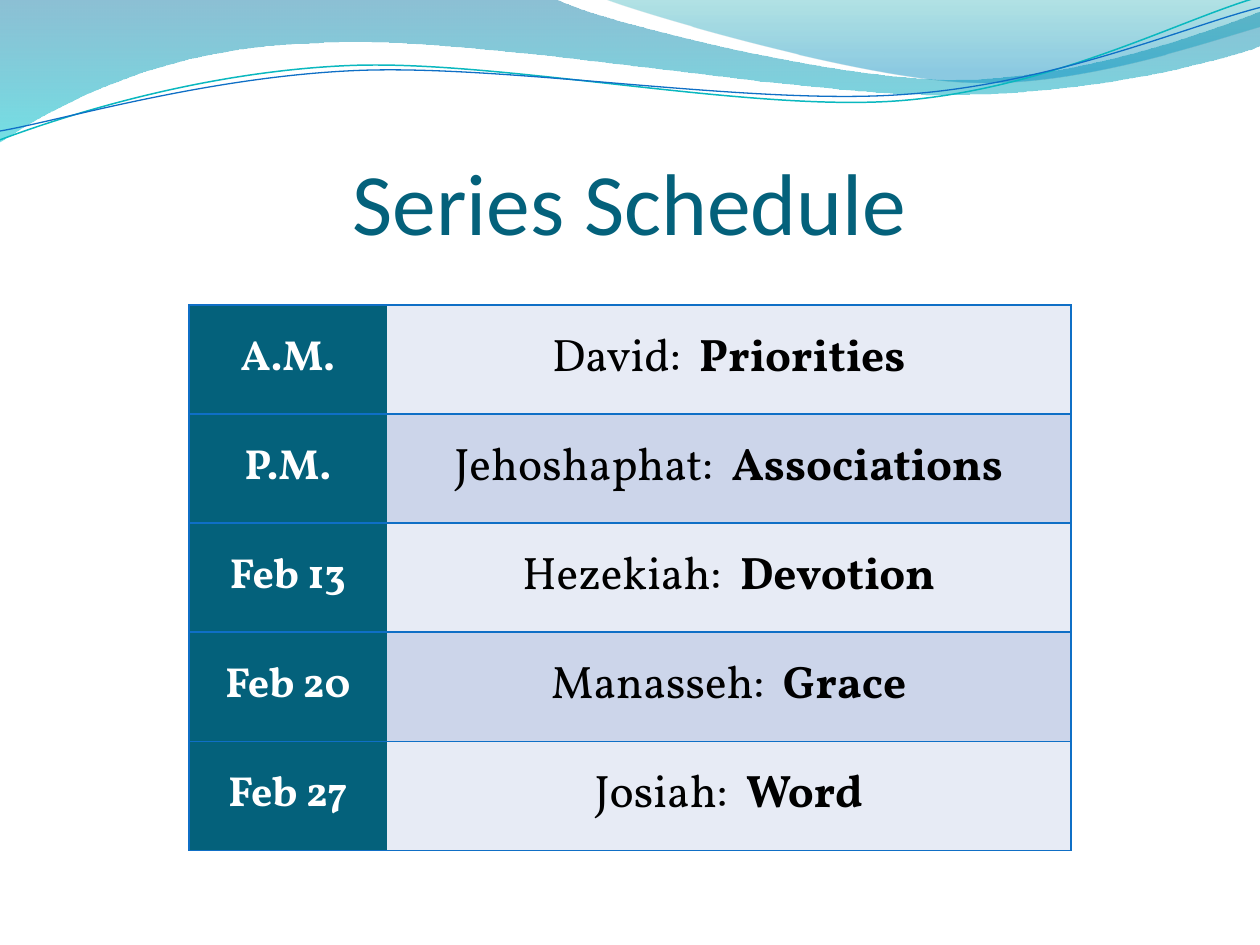
from dataclasses import dataclass
from math import cos, radians, sin

from lxml import etree
from pptx import Presentation
from pptx.dml.color import RGBColor
from pptx.enum.text import MSO_ANCHOR, PP_ALIGN
from pptx.oxml.ns import qn
from pptx.util import Inches, Pt

CENTER = PP_ALIGN.CENTER
MIDDLE, BOTTOM = MSO_ANCHOR.MIDDLE, MSO_ANCHOR.BOTTOM
COLUMNS, ROWS = 10, 7.5
UNIT = Inches(1)  # one grid column or row


@dataclass(frozen=True)
class Theme:
    heading_font: str = "Calibri"
    body_font: str = "Vollkorn"
    title_size: float = 50
    date_size: float = 24
    topic_size: float = 26
    teal: str = "04617B"
    blue: str = "0F6FC6"
    aqua: str = "0AB8BF"
    white: str = "FFFFFF"
    black: str = "000000"
    bands: tuple = ("E7EBF5", "CCD5EA")
    # gradient stops: position, colour, opacity in percent
    wide_wave: tuple = ((0, "0074A1", 45), (1, "00C6CF", 55))
    right_wave: tuple = ((0, "00A1A9", 30), (0.8, "008BBF", 45))


def grid(value):
    return round(value * UNIT)


def rgb(value):
    return RGBColor.from_string(value)


def turn(path, center, degrees):
    """Rotate every point of a path clockwise about the center."""
    (cx, cy), angle = center, radians(degrees)
    turned = []
    for step in path:
        flat = []
        for x, y in zip(step[::2], step[1::2]):
            dx, dy = x - cx, y - cy
            flat += [cx + dx * cos(angle) - dy * sin(angle),
                     cy + dx * sin(angle) + dy * cos(angle)]
        turned.append(tuple(flat))
    return turned


class SlideBuilder:
    def __init__(self, slide, theme):
        self.slide = slide
        self.theme = theme

    def outline(self, path, close):
        """Draw a path of points (2 numbers) and cubic curves (6 numbers)."""
        start, *others = [(grid(x), grid(y)) for step in path
                          for x, y in zip(step[::2], step[1::2])]
        builder = self.slide.shapes.build_freeform(*start)
        builder.add_line_segments(others, close=close)
        shape = builder.convert_to_shape()
        shape.shadow.inherit = False
        segments = shape.element.iter(qn("a:lnTo"))
        segments = iter(list(segments))
        for step in path[1:]:
            first, *rest = [next(segments) for _ in range(len(step) // 2)]
            if not rest:
                continue
            curve = etree.Element(qn("a:cubicBezTo"))
            first.addprevious(curve)
            for segment in (first, *rest):
                curve.append(segment[0])
                segment.getparent().remove(segment)
        return shape

    def wave(self, path, stops):
        shape = self.outline(path, close=True)
        shape.line.fill.background()
        shape.fill.gradient()
        shape.fill.gradient_angle = 270
        for stop, (position, color, _) in zip(shape.fill.gradient_stops, stops):
            stop.position = position
            stop.color.rgb = rgb(color)
        for node, (_, _, opacity) in zip(shape.element.iter(qn("a:srgbClr")), stops):
            etree.SubElement(node, qn("a:alpha"), val=str(opacity * 1000))

    def ribbon(self, path, center, color, width, tilt=2.7):
        shape = self.outline(turn(path, center, tilt), close=False)
        shape.rotation = 360 - tilt
        shape.fill.background()
        shape.line.color.rgb = rgb(color)
        shape.line.width = Pt(width)

    def style(self, paragraph, font_name, size, color):
        paragraph.alignment = CENTER
        font = paragraph.font
        font.name, font.size, font.color.rgb = font_name, Pt(size), rgb(color)

    def title(self, text, left, top, width, height):
        frame = self.slide.shapes.add_textbox(*map(grid, (left, top, width, height))).text_frame
        frame.word_wrap = True
        frame.vertical_anchor = BOTTOM
        frame.margin_left = frame.margin_right = frame.margin_bottom = 0
        frame.text = text
        self.style(frame.paragraphs[0], self.theme.heading_font,
                   self.theme.title_size, self.theme.teal)

    def cell(self, cell, runs, size, color, fill, open_side):
        cell.fill.solid()
        cell.fill.fore_color.rgb = rgb(fill)
        cell.vertical_anchor = MIDDLE
        paragraph = cell.text_frame.paragraphs[0]
        self.style(paragraph, self.theme.body_font, size, color)
        for text, bold in runs:
            run = paragraph.add_run()
            run.text, run.font.bold = text, bold
        self.borders(cell, open_side)

    def borders(self, cell, open_side):
        properties = cell._tc.get_or_add_tcPr()
        for index, side in enumerate(("lnL", "lnR", "lnT", "lnB")):
            line = etree.Element(qn(f"a:{side}"), w=str(Pt(1)))
            if side == open_side:
                etree.SubElement(line, qn("a:noFill"))
            else:
                fill = etree.SubElement(line, qn("a:solidFill"))
                etree.SubElement(fill, qn("a:srgbClr"), val=self.theme.blue)
            properties.insert(index, line)

    def schedule(self, entries, left, top, widths, height):
        theme = self.theme
        table = self.slide.shapes.add_table(
            len(entries), len(widths), *map(grid, (left, top, sum(widths), height))).table
        for column, width in zip(table.columns, widths):
            column.width = grid(width)
        for index, (date, king, topic) in enumerate(entries):
            table.rows[index].height = grid(height / len(entries))
            self.cell(table.cell(index, 0), [(date, True)],
                      theme.date_size, theme.white, theme.teal, "lnR")
            self.cell(table.cell(index, 1), [(f"{king}:  ", False), (topic, True)],
                      theme.topic_size, theme.black, theme.bands[index % 2], "lnL")


WIDE_WAVE = [
    (0, 0), (4.4, -0.01), (4.76, 0.17, 6.64, 0.63, 7.58, 0.63),
    (8.53, 0.63, 9.58, 0.26, 10, 0.09), (10.01, 0.36),
    (9.83, 0.44, 8.7, 0.76, 7.46, 0.75), (6.22, 0.75, 3.82, 0.28, 2.57, 0.34),
    (1.29, 0.36, 0.46, 0.83, -0.01, 1.13), (0, 0),
]
RIGHT_WAVE = [
    (4.79, -0.01), (5.09, 0.11, 6.82, 0.62, 7.69, 0.65),
    (8.56, 0.69, 9.61, 0.32, 10, 0.21), (10, 0), (4.79, -0.01),
]
AQUA_RIBBON = [
    (0, 1.11), (0.48, 0.93, 1.58, 0.57, 2.77, 0.52),
    (3.95, 0.47, 5.93, 0.89, 7.13, 0.8), (8.33, 0.71, 9.38, 0.15, 9.98, -0.02),
]
BLUE_RIBBON = [
    (0, 1.04), (0.47, 0.96, 1.64, 0.61, 2.83, 0.56),
    (4.03, 0.51, 5.97, 0.84, 7.17, 0.75), (8.36, 0.67, 9.41, 0.21, 10, 0.06),
]
ENTRIES = [
    ("A.M.", "David", "Priorities"),
    ("P.M.", "Jehoshaphat", "Associations"),
    ("Feb 13", "Hezekiah", "Devotion"),
    ("Feb 20", "Manasseh", "Grace"),
    ("Feb 27", "Josiah", "Word"),
]


def main():
    deck = Presentation()
    deck.slide_width, deck.slide_height = grid(COLUMNS), grid(ROWS)
    theme = Theme()
    builder = SlideBuilder(deck.slides.add_slide(deck.slide_layouts[6]), theme)
    builder.wave(WIDE_WAVE, theme.wide_wave)
    builder.wave(RIGHT_WAVE, theme.right_wave)
    builder.ribbon(AQUA_RIBBON, (4.99, 0.58), theme.aqua, 0.85)
    builder.ribbon(BLUE_RIBBON, (5, 0.59), theme.blue, 0.75)
    builder.title("Series Schedule", 0.5, 0.76, 9, 1.25)
    builder.schedule(ENTRIES, 1.5, 2.42, widths=(1.57, 5.43), height=4.33)
    deck.save("out.pptx")


if __name__ == "__main__":
    main()
